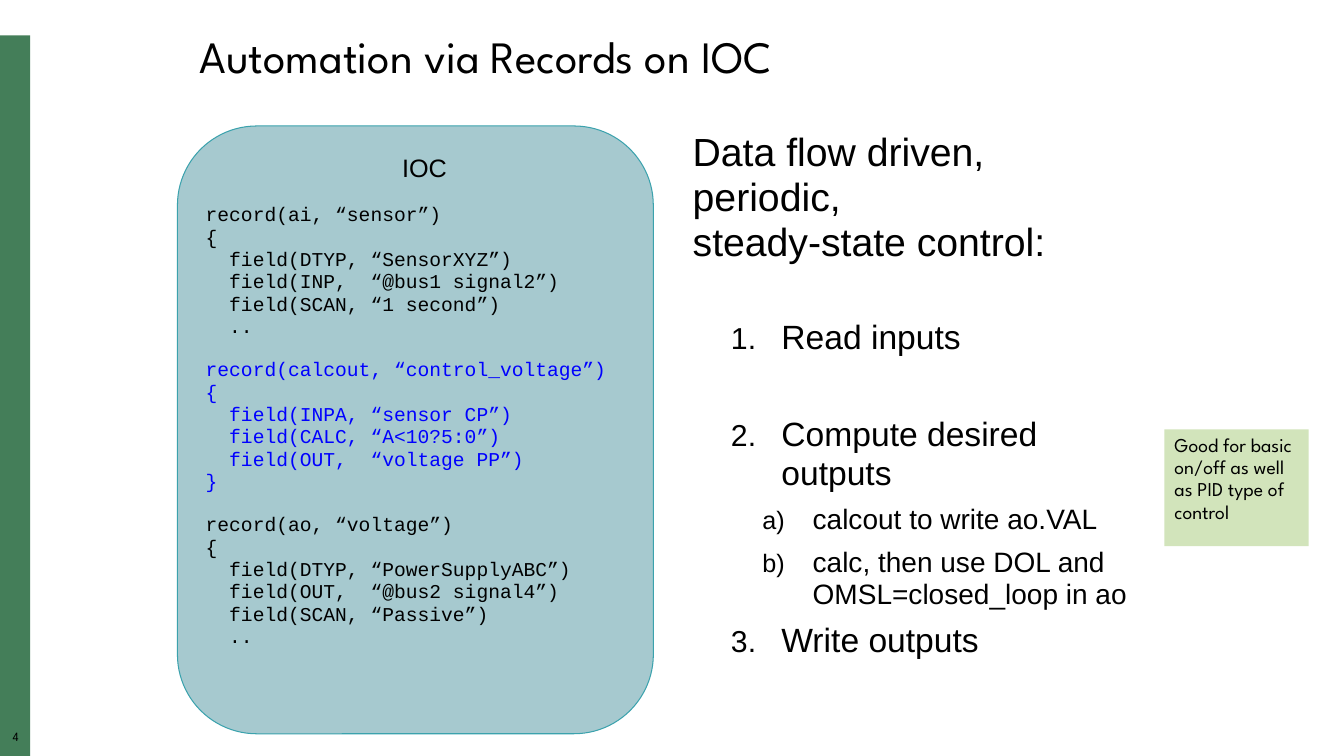
"""Build the slide on automating control with IOC records."""
import lxml.etree
import pptx
import pptx.dml.color
import pptx.enum.shapes
import pptx.enum.text
import pptx.oxml.ns
import pptx.util

Inches = pptx.util.Inches
Shapes = pptx.enum.shapes.MSO_SHAPE
Align = pptx.enum.text.PP_ALIGN
Anchor = pptx.enum.text.MSO_ANCHOR
RGBColor = pptx.dml.color.RGBColor

BLACK = RGBColor(0x00, 0x00, 0x00)
BLUE = RGBColor(0x00, 0x00, 0xFF)
GREEN = RGBColor(0x44, 0x7E, 0x59)
PALE_GREEN = RGBColor(0xD2, 0xE4, 0xBB)
TEAL = RGBColor(0x3B, 0xA2, 0xAD)
PALE_TEAL = RGBColor(0xA6, 0xC9, 0xCF)
HEADING_FONT = "League Spartan"
BODY_FONT = "Arial"
CODE_FONT = "Courier New"

SENSOR_RECORD = """record(ai, “sensor”)
{
  field(DTYP, “SensorXYZ”)
  field(INP,  “@bus1 signal2”)
  field(SCAN, “1 second”)
  .."""
CONTROL_RECORD = """record(calcout, “control_voltage”)
{
  field(INPA, “sensor CP”)
  field(CALC, “A<10?5:0”)
  field(OUT,  “voltage PP”)
}"""
VOLTAGE_RECORD = """record(ao, “voltage”)
{
  field(DTYP, “PowerSupplyABC”)
  field(OUT,  “@bus2 signal4”)
  field(SCAN, “Passive”)
  .."""


def add_panel(kind, left, top, width, height, fill):
    panel = page.shapes.add_shape(kind, Inches(left), Inches(top), Inches(width), Inches(height))
    panel.shadow.inherit = False
    panel.fill.solid()
    panel.fill.fore_color.rgb = fill
    panel.line.fill.background()
    panel.text_frame.word_wrap = True
    panel.text_frame.vertical_anchor = Anchor.TOP
    return panel


def write(para, text, font, size, color=BLACK, before=0, align=Align.LEFT):
    para.text = text
    para.alignment = align
    para.line_spacing = 0.95
    para.space_before = pptx.util.Pt(before)
    para.font.name = font
    para.font.size = pptx.util.Pt(size)
    para.font.color.rgb = color


deck = pptx.Presentation()
deck.slide_width = Inches(13.33)
deck.slide_height = Inches(7.5)
page = deck.slides.add_slide(deck.slide_layouts[1])

add_panel(Shapes.RECTANGLE, 0, 0.35, 0.3, 7.15, GREEN)
number = page.shapes.add_textbox(0, Inches(7.24), Inches(0.31), Inches(0.17)).text_frame
number.word_wrap = True
number.margin_left = number.margin_right = number.margin_top = number.margin_bottom = 0
write(number.paragraphs[0], "4", HEADING_FONT, 9, align=Align.CENTER)

title = page.shapes.title
title.left, title.top, title.width, title.height = map(Inches, (1.88, 0.28, 9.44, 0.59))
title.text_frame.vertical_anchor = Anchor.MIDDLE
title.text_frame.auto_size = pptx.enum.text.MSO_AUTO_SIZE.NONE
write(title.text_frame.paragraphs[0], "Automation via Records on IOC", HEADING_FONT, 32)

ioc = add_panel(Shapes.ROUNDED_RECTANGLE, 1.76, 1.25, 4.72, 6.03, PALE_TEAL)
ioc.line.color.rgb = TEAL
ioc.line.width = pptx.util.Pt(0.75)
code = ioc.text_frame
code.margin_left = code.margin_right = code.margin_top = code.margin_bottom = Inches(0.05)
heading = code.paragraphs[0]
heading._p.get_or_add_pPr().set("marL", str(Inches(0.18)))
write(heading, "IOC", BODY_FONT, 18, align=Align.CENTER)
for record, color in ((SENSOR_RECORD, BLACK), (CONTROL_RECORD, BLUE), (VOLTAGE_RECORD, BLACK)):
    for index, line in enumerate(record.splitlines()):
        write(code.add_paragraph(), line, CODE_FONT, 14, color, before=0 if index else 15)

body = page.placeholders[1]
body.left, body.top, body.width, body.height = map(Inches, (6.77, 1.25, 4.78, 6.02))
steps = body.text_frame
steps.auto_size = pptx.enum.text.MSO_AUTO_SIZE.NONE
steps.margin_right = Inches(0.2)
intro = steps.paragraphs[0]
properties = intro._p.get_or_add_pPr()
properties.set("marL", "0")
properties.set("indent", "0")
lxml.etree.SubElement(properties, pptx.oxml.ns.qn("a:buNone"))
write(intro, "Data flow driven,\nperiodic,\nsteady-state control:", BODY_FONT, 28)

LEVELS = {1: (0.88, 24, "arabicPeriod"), 2: (1.19, 20, "alphaLcParenR")}
STEPS = (
    (1, "Read inputs", 38.5),
    (1, "Compute desired outputs", 42),
    (2, "calcout to write ao.VAL", 8),
    (2, "calc, then use DOL and OMSL=closed_loop in ao", 8),
    (1, "Write outputs", 8),
)
for level, text, before in STEPS:
    indent, size, numbering = LEVELS[level]
    para = steps.add_paragraph()
    para.level = level
    properties = para._p.get_or_add_pPr()
    properties.set("marL", str(Inches(indent)))
    properties.set("indent", str(Inches(-0.5)))
    bullet_color = lxml.etree.SubElement(properties, pptx.oxml.ns.qn("a:buClr"))
    lxml.etree.SubElement(bullet_color, pptx.oxml.ns.qn("a:srgbClr"), val=str(BLACK))
    lxml.etree.SubElement(properties, pptx.oxml.ns.qn("a:buSzPct"), val="90000")
    lxml.etree.SubElement(properties, pptx.oxml.ns.qn("a:buFont"), typeface=BODY_FONT)
    lxml.etree.SubElement(properties, pptx.oxml.ns.qn("a:buAutoNum"), type=numbering)
    write(para, text, BODY_FONT, size, before=before)

note = add_panel(Shapes.RECTANGLE, 11.55, 4.26, 1.43, 1.16, PALE_GREEN)
write(note.text_frame.paragraphs[0], "Good for basic on/off as well as PID type of control", HEADING_FONT, 14)

deck.save("out.pptx")
